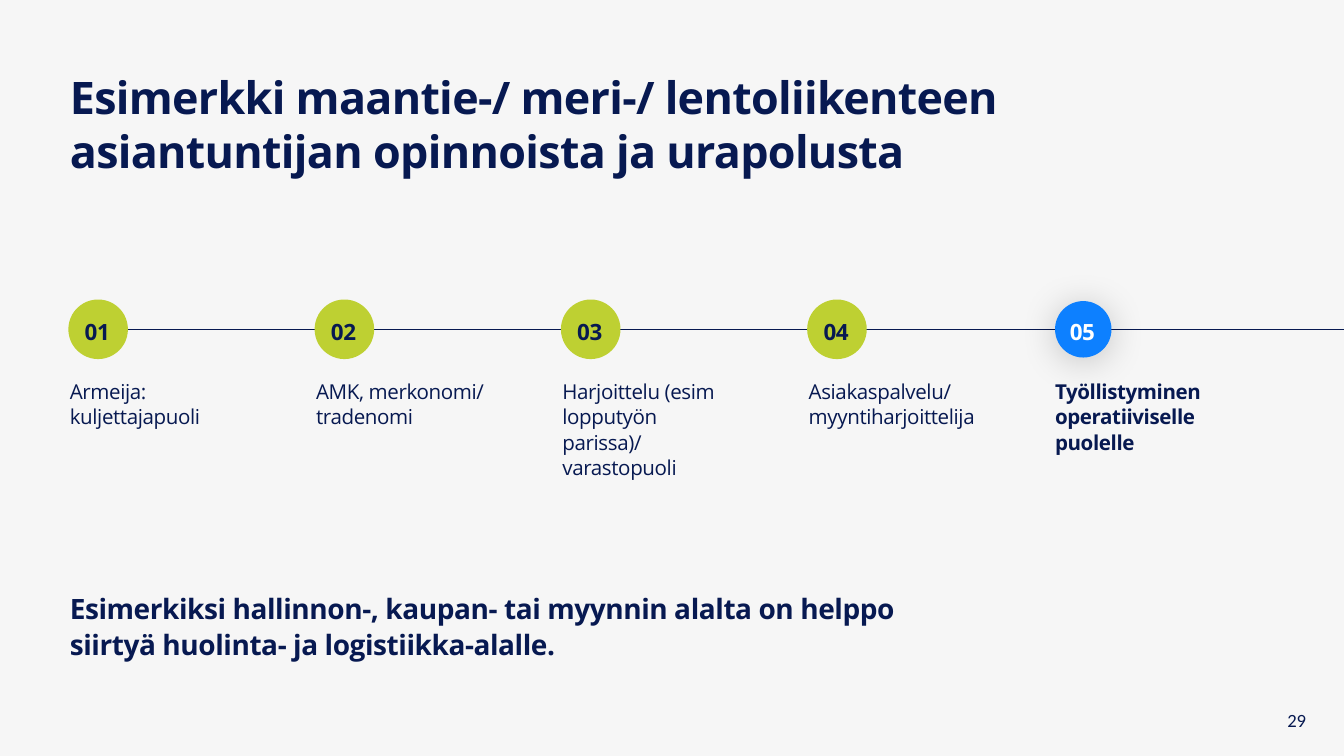
from lxml import etree
from pptx import Presentation
from pptx.dml.color import RGBColor
from pptx.enum.shapes import MSO_CONNECTOR, MSO_SHAPE
from pptx.enum.text import MSO_ANCHOR
from pptx.oxml.ns import qn
from pptx.util import Inches, Pt

OVAL = MSO_SHAPE.OVAL
STRAIGHT = MSO_CONNECTOR.STRAIGHT
TOP, MIDDLE, BOTTOM = MSO_ANCHOR.TOP, MSO_ANCHOR.MIDDLE, MSO_ANCHOR.BOTTOM

NAVY, LIME, BLUE = "071951", "BED032", "0D80FF"
WHITE, PALE = "FFFFFF", "F6F6F6"


def rgb(code):
    return RGBColor.from_string(code)


class Deck:
    font = "Open Sans"

    def __init__(self, width, height):
        self.prs = Presentation()
        self.prs.slide_width = Inches(width)
        self.prs.slide_height = Inches(height)
        self.slide = self.prs.slides.add_slide(self.prs.slide_layouts[6])
        fill = self.slide.background.fill
        fill.solid()
        fill.fore_color.rgb = rgb(PALE)

    def text(self, box, words, size, bold=False, color=NAVY, lead=None,
             track=0, anchor=TOP, inset=(0, 0), font=None):
        frame = self.slide.shapes.add_textbox(*map(Inches, box)).text_frame
        frame.word_wrap = True
        frame.vertical_anchor = anchor
        frame.margin_left = frame.margin_right = Inches(inset[0])
        frame.margin_top = frame.margin_bottom = Inches(inset[1])
        frame.text = words
        para = frame.paragraphs[0]
        if lead:
            para.line_spacing = Pt(lead)
        run = para.runs[0]
        run.font.name = font or self.font
        run.font.size = Pt(size)
        run.font.bold = bold
        run.font.color.rgb = rgb(color)
        if track:
            run.font._element.set("spc", str(round(track * 100)))

    def line(self, start, end, color, width):
        line = self.slide.shapes.add_connector(
            STRAIGHT, *map(Inches, start + end))
        line.line.color.rgb = rgb(color)
        line.line.width = Pt(width)
        etree.SubElement(line._element.spPr, qn("a:effectLst"))

    def dot(self, left, top, size, color, edge=None):
        dot = self.slide.shapes.add_shape(
            OVAL, Inches(left), Inches(top), Inches(size), Inches(size))
        dot.shadow.inherit = False
        dot.fill.solid()
        dot.fill.fore_color.rgb = rgb(color)
        if edge:
            dot.line.color.rgb = rgb(color)
            dot.line.width = Pt(edge)
        else:
            dot.line.fill.background()
        return dot

    def glow(self, shape, blur, drop, alpha):
        effects = shape._element.spPr.find(qn("a:effectLst"))
        shade = etree.SubElement(
            effects, qn("a:outerShdw"), blurRad=str(Pt(blur)),
            dist=str(Pt(drop)), dir="5400000", algn="ctr", rotWithShape="0")
        tint = etree.SubElement(shade, qn("a:srgbClr"), val="000000")
        etree.SubElement(tint, qn("a:alpha"), val=str(alpha * 1000))


def main():
    # A 16:9 slide
    deck = Deck(10, 10 * 9 / 16)
    left, last = 0.52, 7.85

    # Heading
    deck.text((left, 0.52, 7.62, 0.8),
              "Esimerkki maantie-/ meri-/ lentoliikenteen "
              "asiantuntijan opinnoista ja urapolusta",
              24, True, lead=28.8, track=-0.36)

    # Career path: label, label width, label height
    steps = [
        ("Armeija: kuljettajapuoli", 1.06, 0.38),
        ("AMK, merkonomi/ tradenomi", 1.45, 0.38),
        ("Harjoittelu (esim lopputyön parissa)/ varastopuoli", 1.22, 0.76),
        ("Asiakaspalvelu/ myyntiharjoittelija", 1.28, 0.38),
        ("Työllistyminen operatiiviselle puolelle", 1.48, 0.57),
    ]
    pitch = (last - left) / (len(steps) - 1)
    deck.line((left + 0.11, 2.45), (10.12, 2.45), NAVY, 0.83)
    for num, (label, width, height) in enumerate(steps, 1):
        x = left + (num - 1) * pitch
        goal = num == len(steps)
        dot = deck.dot(x, 2.24, 0.42, BLUE if goal else LIME,
                       None if goal else 1.67)
        if goal:
            deck.glow(dot, 20, 2, 20)
        deck.text((x + 0.11, 2.35, 0.21 if goal else 2.01, 0.22),
                  f"{num:02}", 12, True, WHITE if goal else NAVY,
                  lead=15.6, track=-0.2, anchor=BOTTOM)
        deck.text((x, 2.81, width, height), label, 11, goal,
                  lead=13.7, track=-0.22)

    # Closing remark
    deck.text((left, 4.38, 6.74, 0.54),
              "Esimerkiksi hallinnon-, kaupan- tai myynnin alalta on helppo "
              "siirtyä huolinta- ja logistiikka-alalle.",
              15, True, lead=19.5, track=-0.22)

    # Page number
    deck.text((9.48, 5.19, 0.44, 0.33), "29", 10, anchor=MIDDLE,
              inset=(0.1, 0.05), font="Calibri")

    deck.prs.save("out.pptx")


if __name__ == "__main__":
    main()
